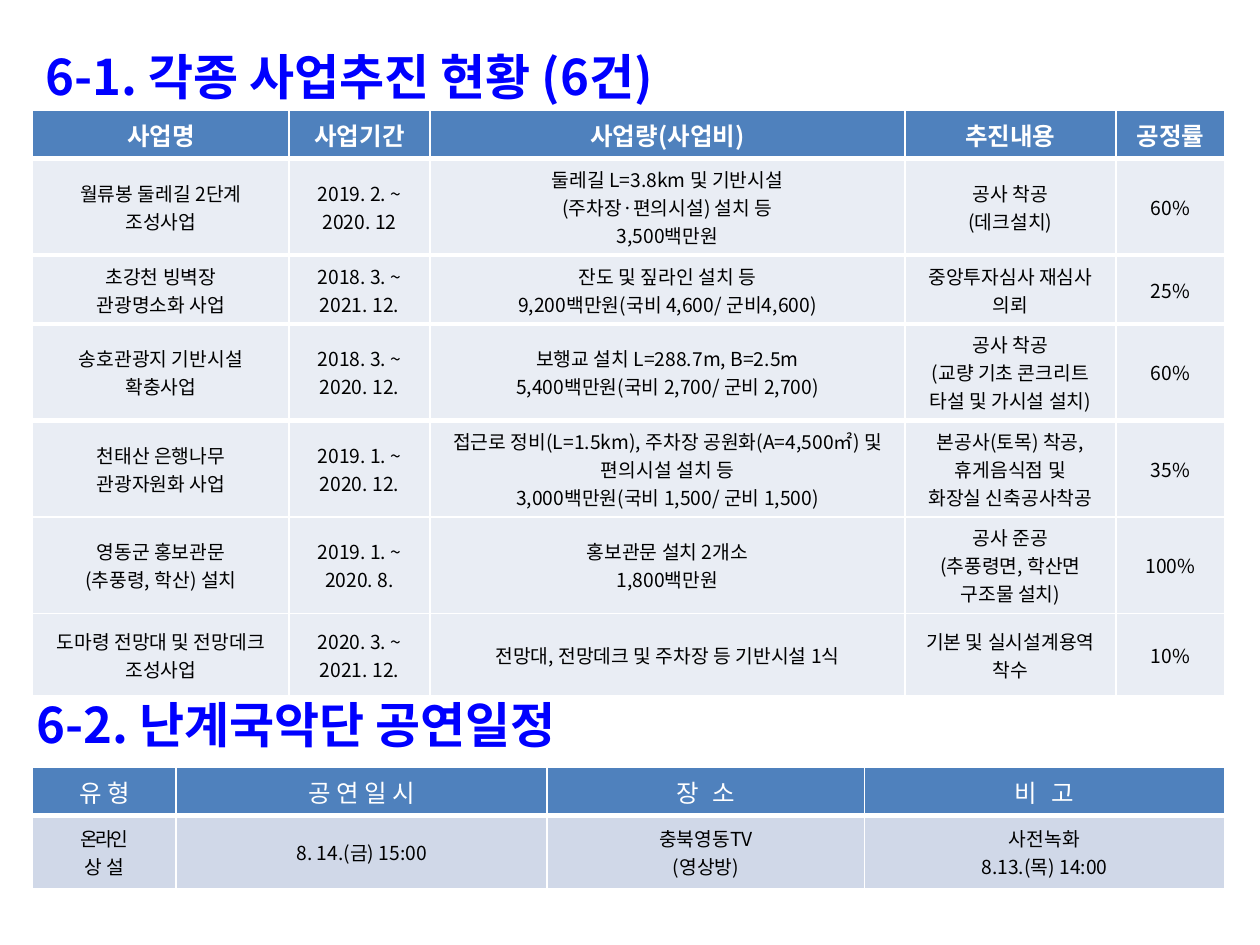
from dataclasses import dataclass

from pptx import Presentation
from pptx.dml.color import RGBColor as RGB
from pptx.enum.text import MSO_ANCHOR as ANCHOR, MSO_AUTO_SIZE as AUTOSIZE, PP_ALIGN as ALIGN
from pptx.oxml.xmlchemy import OxmlElement as Element
from pptx.util import Pt


@dataclass(frozen=True)
class Theme:
    font: str = "Noto Sans CJK KR"
    title: RGB = RGB(0x00, 0x00, 0xFF)
    header: RGB = RGB(0x4F, 0x81, 0xBD)
    project: RGB = RGB(0xE9, 0xED, 0xF4)
    concert: RGB = RGB(0xD0, 0xD8, 0xE8)
    white: RGB = RGB(0xFF, 0xFF, 0xFF)
    black: RGB = RGB(0x00, 0x00, 0x00)
    title_size: int = 28
    header_size: int = 14
    body_size: int = 11


THEME = Theme()
TABLE_LEFT = 18.7

PROJECTS = [
    ["사업명", "사업기간", "사업량(사업비)", "추진내용", "공정률"],
    ["월류봉 둘레길 2단계\n조성사업", "2019. 2. ~\n2020. 12",
     "둘레길 L=3.8km 및 기반시설\n(주차장·편의시설) 설치 등\n3,500백만원",
     "공사 착공\n(데크설치)", "60%"],
    ["초강천 빙벽장\n관광명소화 사업", "2018. 3. ~\n2021. 12.",
     "잔도 및 짚라인 설치 등\n9,200백만원(국비 4,600/ 군비4,600)",
     "중앙투자심사 재심사 의뢰", "25%"],
    ["송호관광지 기반시설\n확충사업", "2018. 3. ~\n2020. 12.",
     "보행교 설치 L=288.7m, B=2.5m\n5,400백만원(국비 2,700/ 군비 2,700)",
     "공사 착공\n(교량 기초 콘크리트 타설 및 가시설 설치)", "60%"],
    ["천태산 은행나무\n관광자원화 사업", "2019. 1. ~\n2020. 12.",
     "접근로 정비(L=1.5km), 주차장 공원화(A=4,500㎡) 및 편의시설 설치 등\n"
     "3,000백만원(국비 1,500/ 군비 1,500)",
     "본공사(토목) 착공,\n휴게음식점 및\n화장실 신축공사착공", "35%"],
    ["영동군 홍보관문\n(추풍령, 학산) 설치", "2019. 1. ~\n2020. 8.",
     "홍보관문 설치 2개소\n1,800백만원",
     "공사 준공\n(추풍령면, 학산면\n구조물 설치)", "100%"],
    ["도마령 전망대 및 전망데크 조성사업", "2020. 3. ~\n2021. 12.",
     "전망대, 전망데크 및 주차장 등 기반시설 1식",
     "기본 및 실시설계용역 착수", "10%"],
]

CONCERTS = [
    ["유 형", "공 연 일 시", "장 소", "비 고"],
    ["온라인\n상 설", "8. 14.(금) 15:00", "충북영동TV\n(영상방)",
     "사전녹화\n8.13.(목) 14:00"],
]

# Letter spacing in points for the words set wider or tighter
TRACKING = {"장 소": 2.5, "비 고": 2.5, "온라인": -1.5}


def add_run(p, text, size, color, bold=False):
    r = p.add_run()
    r.text = text
    r.font.size = Pt(size)
    r.font.bold = bold
    r.font.color.rgb = color
    r.font.name = THEME.font
    rPr = r.font._element
    ea = Element("a:ea")
    ea.set("typeface", THEME.font)
    rPr.append(ea)
    if text in TRACKING:
        rPr.set("spc", str(int(TRACKING[text] * 100)))


def add_title(slide, text, left, top, width, margin, hanging):
    sp = slide.shapes.add_textbox(Pt(left), Pt(top), Pt(width), Pt(57))
    tf = sp.text_frame
    tf.word_wrap = False
    tf.auto_size = AUTOSIZE.NONE
    p = tf.paragraphs[0]
    p.alignment = ALIGN.LEFT
    p.line_spacing = 1.5
    pPr = p._p.get_or_add_pPr()
    pPr.set("marL", str(Pt(margin)))
    pPr.set("indent", str(-Pt(hanging)))
    add_run(p, text, THEME.title_size, THEME.title, bold=True)


def set_borders(cell, above, below):
    tcPr = cell._tc.get_or_add_tcPr()
    for side, weight in (("L", 1), ("R", 1), ("T", above), ("B", below)):
        ln = Element(f"a:ln{side}")
        ln.set("w", str(Pt(weight)))
        fill = Element("a:solidFill")
        color = Element("a:srgbClr")
        color.set("val", str(THEME.white))
        fill.append(color)
        ln.append(fill)
        tcPr.append(ln)


def fill_cell(cell, text, fill, size, color, bold):
    cell.fill.solid()
    cell.fill.fore_color.rgb = fill
    cell.vertical_anchor = ANCHOR.MIDDLE
    tf = cell.text_frame
    for i, line in enumerate(text.split("\n")):
        p = tf.add_paragraph() if i else tf.paragraphs[0]
        p.alignment = ALIGN.CENTER
        add_run(p, line, size, color, bold)


def add_grid(slide, rows, top, widths, heights, rules, body_fill, bold_header):
    """Add a table; rules holds the weight of each horizontal line, top to bottom."""
    frame = slide.shapes.add_table(len(rows), len(widths), Pt(TABLE_LEFT), Pt(top),
                                   Pt(sum(widths)), Pt(sum(heights)))
    table = frame.table
    table.horz_banding = False
    for column, width in zip(table.columns, widths):
        column.width = Pt(width)
    for i, (texts, height) in enumerate(zip(rows, heights)):
        table.rows[i].height = Pt(height)
        if i == 0:
            style = (THEME.header, THEME.header_size, THEME.white, bold_header)
        else:
            style = (body_fill, THEME.body_size, THEME.black, False)
        for j, text in enumerate(texts):
            cell = table.cell(i, j)
            set_borders(cell, rules[i], rules[i + 1])
            fill_cell(cell, text, *style)


def main():
    prs = Presentation()
    prs.slide_width, prs.slide_height = Pt(720), Pt(540)
    slide = prs.slides.add_slide(prs.slide_layouts[6])

    add_title(slide, "6-1. 각종 사업추진 현황 (6건)", 19, 6.5, 411, 42, 42)
    add_grid(slide, PROJECTS, 63, [146.5, 80.5, 271.5, 120.5, 62.5],
             [27.5, 55, 39.5, 55, 55, 55, 47], [1, 3, 3, 3, 3, 1, 1, 1],
             THEME.project, bold_header=True)

    add_title(slide, "6-2. 난계국악단 공연일정", -3, 376.5, 719, 53, 36)
    add_grid(slide, CONCERTS, 438.5, [82, 212, 181.5, 205.5], [27, 41.5], [1, 3, 1],
             THEME.concert, bold_header=False)

    prs.save("out.pptx")


if __name__ == "__main__":
    main()
